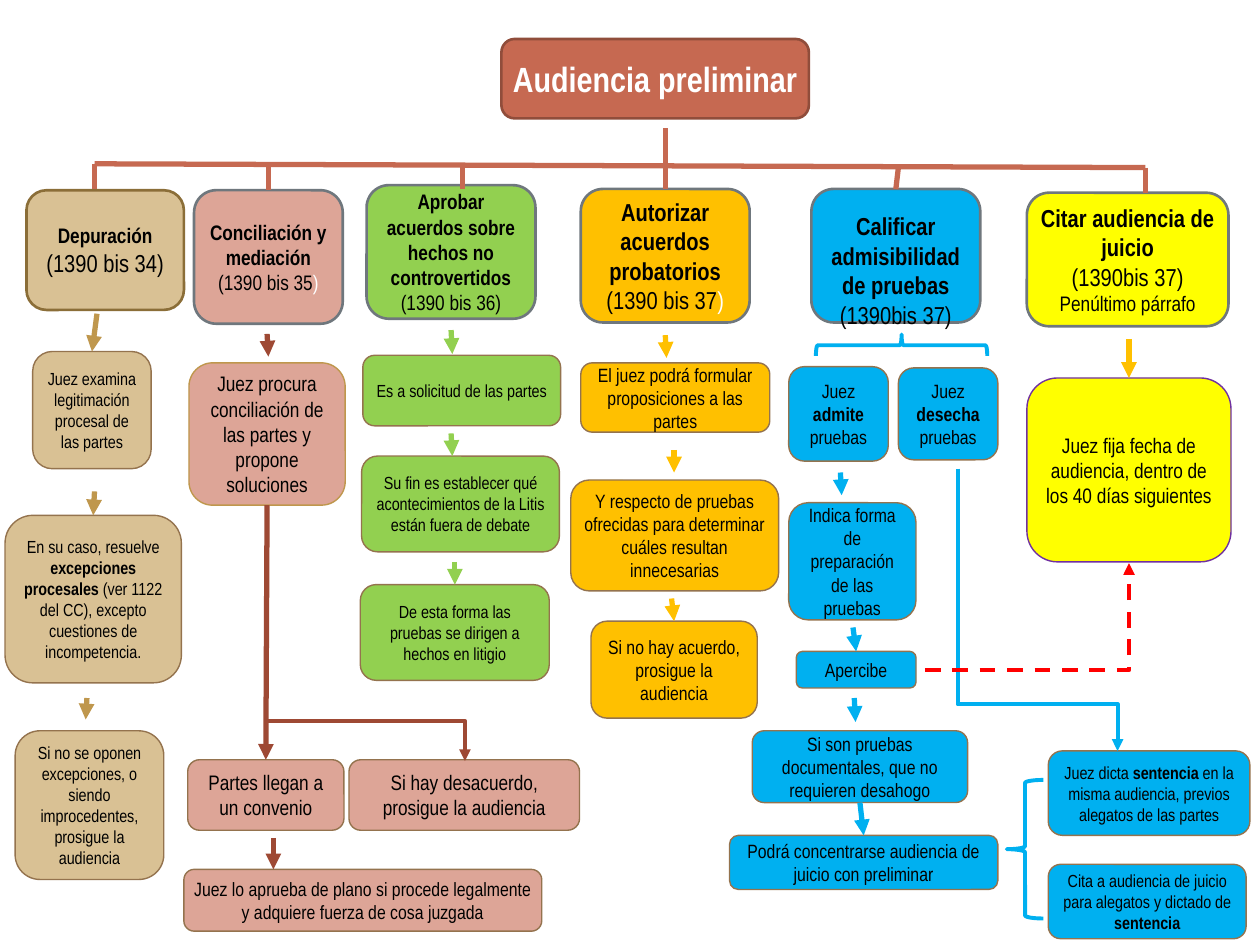
from dataclasses import dataclass
from typing import NamedTuple

from lxml.etree import SubElement
from pptx import Presentation
from pptx.dml.color import RGBColor
from pptx.enum.dml import MSO_LINE
from pptx.enum.shapes import MSO_CONNECTOR, MSO_SHAPE
from pptx.enum.text import MSO_ANCHOR, PP_ALIGN
from pptx.oxml.ns import qn
from pptx.util import Inches, Pt

FONT = "Arial Narrow"
BLACK = RGBColor(0x00, 0x00, 0x00)
WHITE = RGBColor(0xFF, 0xFF, 0xFF)
BRICK = RGBColor(0xC6, 0x69, 0x51)
BRICK_EDGE = RGBColor(0x90, 0x4D, 0x3B)
RUST = RGBColor(0x9E, 0x49, 0x34)
SAND = RGBColor(0xD9, 0xC1, 0x94)
SAND_EDGE = RGBColor(0x8B, 0x6E, 0x38)
OCHRE = RGBColor(0xBF, 0x97, 0x4D)
ROSE = RGBColor(0xDD, 0xA5, 0x97)
GREEN = RGBColor(0x92, 0xD0, 0x50)
AMBER = RGBColor(0xFF, 0xC0, 0x00)
BLUE = RGBColor(0x00, 0xB0, 0xF0)
YELLOW = RGBColor(0xFF, 0xFF, 0x00)
RED = RGBColor(0xFF, 0x00, 0x00)
PURPLE = RGBColor(0x70, 0x30, 0xA0)
GREY = RGBColor(0x6F, 0x77, 0x7D)
BROWN = RGBColor(0x94, 0x73, 0x4E)

Point = tuple[float, float]


class Run(NamedTuple):
    text: str
    size: float
    bold: bool = False
    color: RGBColor = BLACK


@dataclass
class Box:
    x: float
    y: float
    w: float
    h: float
    fill: RGBColor
    paras: list[list[Run]]
    edge: RGBColor = BROWN
    edge_pt: float = 0.79
    top_inset: float = 0.05

    def sites(self) -> list[Point]:
        """Middles of the sides, in connection-site order."""
        cx, cy = self.x + self.w / 2, self.y + self.h / 2
        return [(cx, self.y), (self.x, cy), (cx, self.y + self.h), (self.x + self.w, cy)]


class Link(NamedTuple):
    start: Point
    end: Point
    color: RGBColor
    arrow: bool = True


class Route(NamedTuple):
    points: list[Point]
    color: RGBColor
    dashed: bool = False


def header(x, y, w, h, fill, *paras, edge=GREY, top_inset=0.05) -> Box:
    return Box(x, y, w, h, fill, list(paras), edge, 1.5, top_inset)


def step(x, y, w, h, fill, size, text, edge=BROWN) -> Box:
    """Process box; words between double asterisks are bold."""
    runs = [Run(t, size, i % 2 == 1) for i, t in enumerate(text.split("**")) if t]
    return Box(x, y, w, h, fill, [runs], edge)


BOXES = [
    header(3.98, 0.31, 2.44, 0.63, BRICK,
           [Run("Audiencia preliminar", 20, True, WHITE)], edge=BRICK_EDGE),
    header(0.21, 1.51, 1.25, 0.95, SAND, [Run("Depuración", 12, True)],
           [Run("(1390 bis 34)", 14)], edge=SAND_EDGE),
    header(1.54, 1.51, 1.18, 1.06, ROSE, [Run("Conciliación y mediación", 12, True)],
           [Run("(1390 bis 35", 12), Run(")", 12, color=WHITE)]),
    header(2.91, 1.47, 1.34, 1.06, GREEN,
           [Run("Aprobar acuerdos sobre hechos no controvertidos ", 12, True),
            Run("(1390 bis 36)", 12)]),
    header(4.61, 1.5, 1.34, 1.06, AMBER, [Run("Autorizar acuerdos probatorios", 14, True)],
           [Run("(1390 bis 37", 14), Run(")", 14, color=WHITE)]),
    header(6.44, 1.5, 1.34, 1.06, BLUE,
           [Run("Calificar admisibilidad de pruebas", 14, True)],
           [Run("(1390bis 37)", 14)], top_inset=0.28),
    header(8.15, 1.53, 1.6, 1.06, YELLOW, [Run("Citar audiencia de juicio", 14, True)],
           [Run("(1390bis 37)", 14)], [Run("Penúltimo párrafo", 12)]),
    step(0.26, 2.79, 0.94, 0.93, SAND, 10, "Juez examina legitimación procesal de las partes"),
    step(0.04, 4.09, 1.4, 1.33, SAND, 10,
         "En su caso, resuelve **excepciones procesales **(ver 1122 del CC), "
         "excepto cuestiones de incompetencia."),
    step(0.12, 5.8, 1.18, 1.18, SAND, 10,
         "Si no se oponen excepciones, o siendo improcedentes, prosigue la audiencia"),
    step(1.5, 2.88, 1.24, 1.13, ROSE, 12,
         "Juez procura conciliación de las partes y propone soluciones", OCHRE),
    step(1.49, 6.03, 1.24, 0.56, ROSE, 12, "Partes llegan a un convenio"),
    step(2.77, 6.03, 1.83, 0.56, ROSE, 12, "Si hay desacuerdo, prosigue la audiencia"),
    step(1.46, 6.9, 2.84, 0.49, ROSE, 11,
         "Juez lo aprueba de plano si procede legalmente y adquiere fuerza de cosa juzgada"),
    step(2.88, 2.82, 1.57, 0.56, GREEN, 10, "Es a solicitud de las partes"),
    step(2.87, 3.62, 1.57, 0.76, GREEN, 10,
         "Su fin es establecer qué acontecimientos de la Litis están fuera de debate"),
    step(2.86, 4.64, 1.5, 0.76, GREEN, 10,
         "De esta forma las pruebas se dirigen a hechos en litigio"),
    step(4.61, 2.88, 1.5, 0.55, AMBER, 11,
         "El juez podrá formular proposiciones a las partes"),
    step(4.53, 3.81, 1.65, 0.88, AMBER, 11,
         "Y respecto de pruebas ofrecidas para determinar cuáles resultan innecesarias"),
    step(4.69, 4.93, 1.32, 0.77, AMBER, 11, "Si no hay acuerdo, prosigue la audiencia"),
    step(6.26, 2.91, 0.79, 0.75, BLUE, 11, "Juez **admite** pruebas"),
    step(7.13, 2.92, 0.79, 0.73, BLUE, 11, "Juez **desecha** pruebas"),
    step(6.26, 3.99, 1.01, 0.93, BLUE, 11, "Indica forma de preparación de las pruebas"),
    step(6.32, 5.17, 0.95, 0.29, BLUE, 11, "Apercibe"),
    step(5.97, 5.8, 1.71, 0.57, BLUE, 11,
         "Si son pruebas documentales, que no requieren desahogo"),
    step(5.79, 6.63, 2.13, 0.43, BLUE, 11,
         "Podrá concentrarse audiencia de juicio con preliminar"),
    step(8.32, 5.96, 1.6, 0.67, BLUE, 10,
         "Juez dicta **sentencia** en la misma audiencia, previos alegatos de las partes"),
    step(8.32, 6.86, 1.57, 0.59, BLUE, 10,
         "Cita a audiencia de juicio para alegatos y dictado de **sentencia**"),
    step(8.15, 3, 1.62, 1.46, YELLOW, 12,
         "Juez fija fecha de audiencia, dentro de los 40 días siguientes", PURPLE),
]

STEMS = [(0.75, 1.3), (2.13, 1.32), (3.67, 1.3), (5.28, 1.33), (7.13, 1.33), (9.09, 1.33)]
LINKS = [
    Link((0.75, 1.3), (9.09, 1.33), BRICK, False),
    Link((5.28, 1.02), (5.28, 1.31), BRICK, False),
    *(Link((x, y), (x, y + 0.2), BRICK, False) for x, y in STEMS),
    Link((0.77, 2.49), (0.76, 2.78), OCHRE),
    Link((0.75, 3.9), (0.74, 4.07), OCHRE),
    Link((0.69, 5.54), (0.68, 5.71), OCHRE),
    Link((2.12, 2.65), (2.13, 2.83), RUST),
    Link((2.12, 3.99), (2.11, 6.03), RUST),
    Link((2.17, 6.65), (2.17, 6.9), RUST),
    Link((3.58, 2.62), (3.59, 2.81), GREEN),
    Link((3.58, 3.44), (3.59, 3.62), GREEN),
    Link((3.61, 4.46), (3.62, 4.65), GREEN),
    Link((5.28, 2.66), (5.29, 2.84), AMBER),
    Link((5.35, 3.57), (5.35, 3.75), AMBER),
    Link((5.33, 4.75), (5.34, 4.93), AMBER),
    Link((8.96, 2.69), (8.96, 3), AMBER),
    Link((6.67, 3.75), (6.68, 3.93), BLUE),
    Link((6.77, 4.98), (6.78, 5.17), BLUE),
    Link((6.78, 5.54), (6.79, 5.73), BLUE),
    Link((6.82, 6.4), (6.84, 6.6), BLUE),
]

ROUTES = [
    Route([(2.11, 5.72), (3.69, 5.72), (3.69, 6.04)], RUST),
    Route([(7.6, 3.72), (7.6, 5.59), (8.87, 5.59), (8.87, 5.96)], BLUE),
    Route([(7.34, 5.32), (8.96, 5.32), (8.96, 4.47)], RED, dashed=True),
]


def add_run(p, text: str, *, size: float, bold: bool = False, color: RGBColor = BLACK) -> None:
    r = p.add_run()
    r.text = text
    r.font.name, r.font.size, r.font.bold = FONT, Pt(size), bold
    r.font.color.rgb = color


def set_line(sp, color: RGBColor, width: float, arrow: bool = False) -> None:
    sp.line.color.rgb = color
    sp.line.width = Pt(width)
    if arrow:
        SubElement(sp.line._get_or_add_ln(), qn("a:tailEnd"), type="triangle")


def draw_box(s, box: Box):
    sp = s.shapes.add_shape(MSO_SHAPE.ROUNDED_RECTANGLE, *map(Inches, (box.x, box.y, box.w, box.h)))
    sp.shadow.inherit = False
    sp.fill.solid()
    sp.fill.fore_color.rgb = box.fill
    set_line(sp, box.edge, box.edge_pt)
    tf = sp.text_frame
    tf.word_wrap = True
    tf.vertical_anchor = MSO_ANCHOR.MIDDLE
    tf.margin_left = tf.margin_right = tf.margin_bottom = Inches(0.05)
    tf.margin_top = Inches(box.top_inset)
    for i, runs in enumerate(box.paras):
        p = tf.add_paragraph() if i else tf.paragraphs[0]
        p.alignment = PP_ALIGN.CENTER
        for run in runs:
            add_run(p, run.text, size=run.size, bold=run.bold, color=run.color)
    return sp


def draw_link(s, link: Link, shapes: list) -> None:
    """Draw a straight line, joined to any box whose side middle it reaches."""
    c = s.shapes.add_connector(MSO_CONNECTOR.STRAIGHT, *map(Inches, link.start + link.end))
    set_line(c, link.color, 3, link.arrow)
    SubElement(c._element.spPr, qn("a:effectLst"))
    for (x, y), join in ((link.start, c.begin_connect), (link.end, c.end_connect)):
        for box, sp in zip(BOXES, shapes):
            for site, (sx, sy) in enumerate(box.sites()):
                if max(abs(x - sx), abs(y - sy)) < 0.035:
                    join(sp, site)


def draw_route(s, route: Route) -> None:
    first, *rest = [(Inches(x), Inches(y)) for x, y in route.points]
    builder = s.shapes.build_freeform(*first)
    builder.add_line_segments(rest, close=False)
    sp = builder.convert_to_shape()
    sp.shadow.inherit = False
    sp.fill.background()
    if route.dashed:
        sp.line.dash_style = MSO_LINE.DASH
    set_line(sp, route.color, 2.25, arrow=True)


def draw_brace(s, x: float, y: float, w: float, h: float, rotation: float = 0) -> None:
    sp = s.shapes.add_shape(MSO_SHAPE.LEFT_BRACE, *map(Inches, (x, y, w, h)))
    sp.shadow.inherit = False
    sp.fill.background()
    sp.rotation = rotation
    set_line(sp, BLUE, 2.25)


def main() -> None:
    prs = Presentation()
    prs.slide_width, prs.slide_height = Inches(10), Inches(7.5)
    s = prs.slides.add_slide(prs.slide_layouts[6])
    shapes = [draw_box(s, box) for box in BOXES]
    for link in LINKS:
        draw_link(s, link, shapes)
    draw_brace(s, 7.07, 2.06, 0.17, 1.36, rotation=90)
    draw_brace(s, 7.99, 6.19, 0.29, 1.1)
    for route in ROUTES:
        draw_route(s, route)
    prs.save("out.pptx")


if __name__ == "__main__":
    main()
